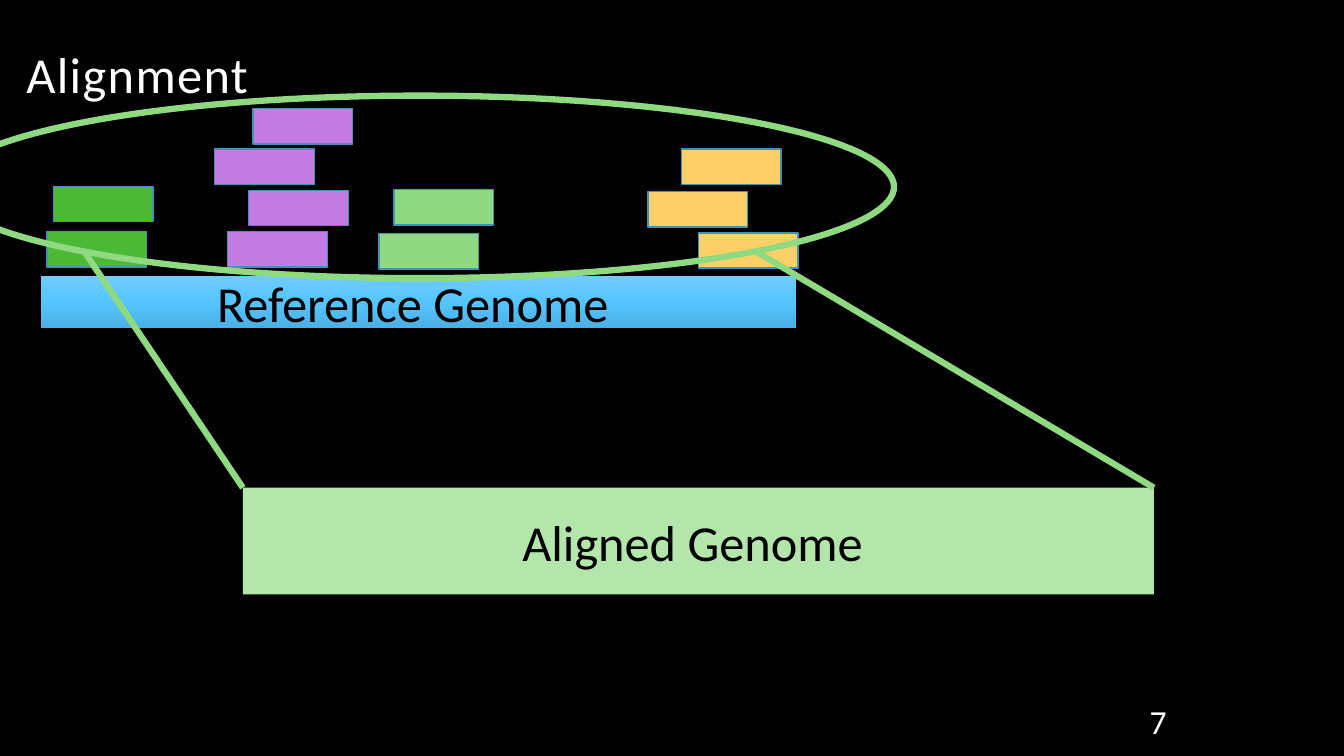
from copy import deepcopy

from lxml.etree import SubElement
from pptx import Presentation
from pptx.dml.color import RGBColor
from pptx.enum.shapes import MSO_CONNECTOR as Connector, MSO_SHAPE as Shape
from pptx.enum.text import MSO_ANCHOR as Anchor, PP_ALIGN as Align
from pptx.oxml.ns import qn
from pptx.util import Cm, Pt

COLORS = {
    "background": "000000",
    "light_text": "FFFFFF",
    "dark_text": "000000",
    "read_outline": "4092BD",
    "green": "4BB836",
    "purple": "C27CE4",
    "light_green": "8FDA81",
    "yellow": "FDD067",
    "aligned": "B4E6AB",
}
REFERENCE_GRADIENT = [(0, "70CBFF"), (0.5, "56C5FF"), (1, "4AB0E5")]
FONT = "Calibri"

TITLE = ("Alignment", (0.41, 0.43, 23.93, 2.34))
REFERENCE = ("Reference Genome ", (1.04, 6.96, 19.02, 1.3))
ALIGNED = ("Aligned Genome ", (6.12, 12.29, 22.96, 2.69))
PAGE_NUMBER = ("7", (27.31, 17.78, 2.34, 0.76))
HIGHLIGHT = (-1.4, 2.41, 23.93, 4.6)
READ_SIZE = (2.51, 0.89)
READS = {
    "green": [(1.19, 5.84), (1.35, 4.7)],
    "purple": [(5.74, 5.84), (6.27, 4.8), (5.41, 3.76), (6.38, 2.74)],
    "light_green": [(9.55, 5.89), (9.93, 4.78)],
    "yellow": [(17.6, 5.87), (16.33, 4.83), (17.17, 3.76)],
}
ZOOM_LEFT, ZOOM_RIGHT, ZOOM_TOP = 2.11, 19.02, 6.32


def color(name):
    return RGBColor.from_string(COLORS[name])


def lengths(values):
    return [Cm(value) for value in values]


def write(shape, text, size, color_name, align, anchor=Anchor.MIDDLE):
    frame = shape.text_frame
    frame.word_wrap = True
    frame.vertical_anchor = anchor
    paragraph = frame.paragraphs[0]
    paragraph.text = text
    paragraph.alignment = align
    paragraph.font.name = FONT
    paragraph.font.size = Pt(size)
    paragraph.font.color.rgb = color(color_name)
    return paragraph


def set_line(shape, color_name, width):
    shape.line.color.rgb = color(color_name)
    shape.line.width = Pt(width)


def add_shape(shapes, kind, box, fill=None):
    shape = shapes.add_shape(kind, *lengths(box))
    shape.shadow.inherit = False
    shape.line.fill.background()
    if fill:
        shape.fill.solid()
        shape.fill.fore_color.rgb = color(fill)
    else:
        shape.fill.background()
    return shape


def add_zoom_line(shapes, start, end):
    line = shapes.add_connector(Connector.STRAIGHT, *lengths(start + end))
    set_line(line, "light_green", 4.5)
    SubElement(line._element.spPr, qn("a:effectLst"))


def fill_gradient(shape, stops):
    shape.fill.gradient()
    shape.fill.gradient_angle = 270
    stop_list = shape._element.spPr.find(".//" + qn("a:gsLst"))
    stop_list.insert(1, deepcopy(stop_list[0]))
    for stop, (position, value) in zip(shape.fill.gradient_stops, stops):
        stop.position = position
        stop.color.rgb = RGBColor.from_string(value)


def add_genome(shapes):
    group = shapes.add_group_shape().shapes
    text, box = REFERENCE
    reference = add_shape(group, Shape.RECTANGLE, box)
    fill_gradient(reference, REFERENCE_GRADIENT)
    write(reference, text, 36, "dark_text", Align.CENTER)
    for color_name, positions in READS.items():
        for position in positions:
            read = add_shape(group, Shape.RECTANGLE, position + READ_SIZE, color_name)
            set_line(read, "read_outline", 1)


def main():
    presentation = Presentation()
    presentation.slide_width, presentation.slide_height = lengths((33.87, 19.05))
    slide = presentation.slides.add_slide(presentation.slide_layouts[5])
    slide.background.fill.solid()
    slide.background.fill.fore_color.rgb = color("background")
    shapes = slide.shapes

    text, box = TITLE
    title = shapes.title
    title.left, title.top, title.width, title.height = lengths(box)
    paragraph = write(title, text, 36, "light_text", Align.LEFT, Anchor.BOTTOM)
    paragraph.line_spacing = 0.9
    paragraph.runs[0].font._element.set("spc", "100")

    add_genome(shapes)

    text, box = PAGE_NUMBER
    number = shapes.add_textbox(*lengths(box))
    write(number, text, 24, "light_text", Align.RIGHT)

    text, box = ALIGNED
    aligned = add_shape(shapes, Shape.RECTANGLE, box, "aligned")
    write(aligned, text, 36, "dark_text", Align.CENTER)

    highlight = add_shape(shapes, Shape.OVAL, HIGHLIGHT)
    set_line(highlight, "light_green", 4.5)

    left, top, width, _ = box
    add_zoom_line(shapes, (ZOOM_RIGHT, ZOOM_TOP), (left + width, top))
    add_zoom_line(shapes, (ZOOM_LEFT, ZOOM_TOP), (left, top))

    presentation.save("out.pptx")


if __name__ == "__main__":
    main()
